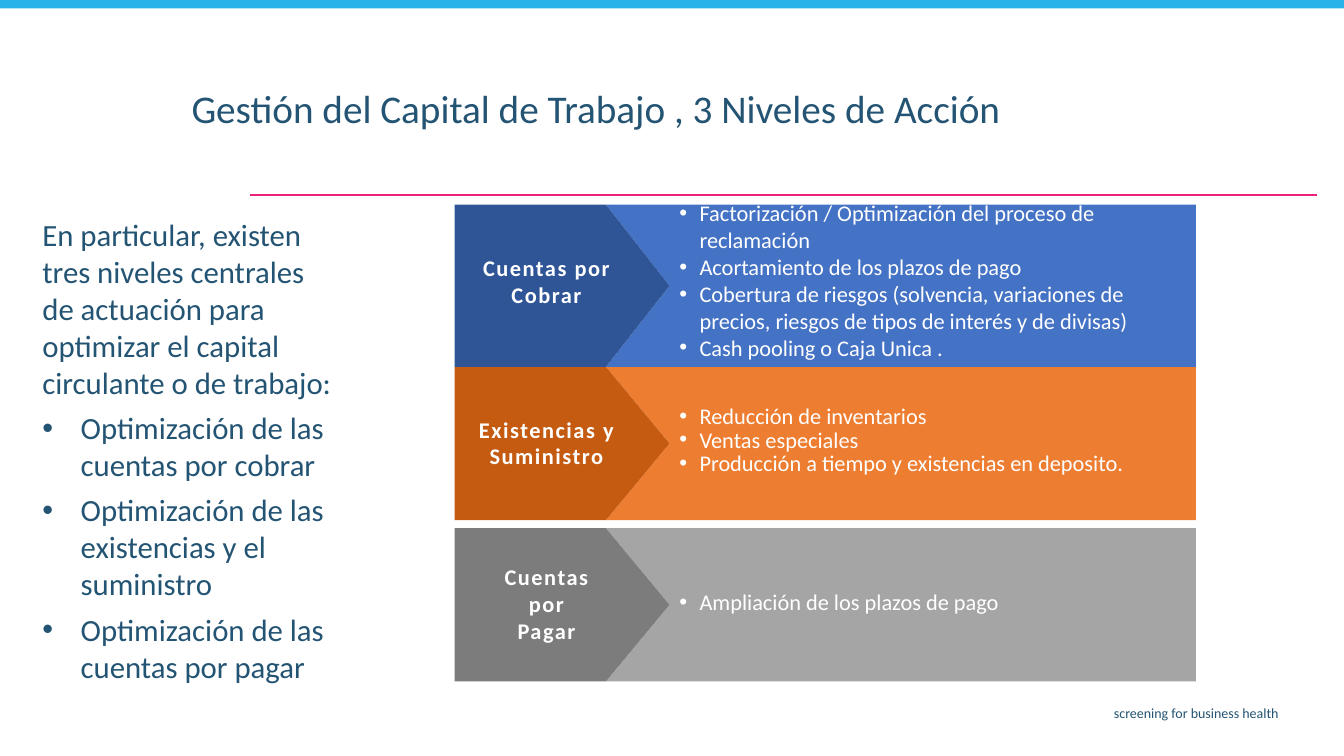
from lxml import etree
from pptx import Presentation, util as u
from pptx.dml.color import RGBColor
from pptx.enum import shapes, text
from pptx.oxml import ns

NAVY = RGBColor(0x24, 0x54, 0x73)
CYAN = RGBColor(0x29, 0xB3, 0xE8)
PINK = RGBColor(0xEC, 0x21, 0x79)
WHITE = RGBColor(0xFF, 0xFF, 0xFF)
BLUE = RGBColor(0x44, 0x72, 0xC4)
DEEP_BLUE = RGBColor(0x2F, 0x55, 0x97)
AMBER = RGBColor(0xED, 0x7D, 0x31)
DEEP_AMBER = RGBColor(0xC5, 0x5A, 0x11)
GRAY = RGBColor(0xA5, 0xA5, 0xA5)
DEEP_GRAY = RGBColor(0x7C, 0x7C, 0x7C)

LEFT, MID, TIP, RIGHT = 33.83, 45.09, 49.81, 88.97
TIGHT = u.Pt(16.6)

INTRO = ("En particular, existen tres niveles centrales de actuación para "
         "optimizar el capital circulante o de trabajo:")
GOALS = ["Optimización de las cuentas por cobrar",
         "Optimización de las existencias y el suministro",
         "Optimización de las cuentas por pagar"]

# top, height, text top, text height, line spacing, colours, label, points
BANDS = [
    (48.53, 20.27, 53.07, 10.93, TIGHT, AMBER, DEEP_AMBER,
     ["Existencias y", "Suministro"],
     ["Reducción de inventarios", "Ventas especiales",
      "Producción a tiempo y existencias en deposito."]),
    (69.87, 20.27, 77.6, 4.53, TIGHT, GRAY, DEEP_GRAY,
     ["Cuentas", "por", "Pagar"],
     ["Ampliación de los plazos de pago"]),
    (27.07, 21.46, 25.73, 22.93, 1.0, BLUE, DEEP_BLUE,
     ["Cuentas por", "Cobrar"],
     ["Factorización / Optimización del proceso de reclamación",
      "Acortamiento de los plazos de pago",
      "Cobertura de riesgos (solvencia, variaciones de precios, "
      "riesgos de tipos de interés y de divisas)",
      "Cash pooling o Caja Unica ."]),
]


class Deck:
    """Holds the style and the slide; lengths are percent of its size."""
    face = "Calibri"

    def __init__(self):
        self.prs = Presentation()
        self.prs.slide_width = u.Inches(13.33)
        self.prs.slide_height = u.Inches(7.5)
        self.slide = self.prs.slides.add_slide(self.prs.slide_layouts[5])
        self.items = self.slide.shapes

    def x(self, share):
        return round(self.prs.slide_width * share / 100)

    def y(self, share):
        return round(self.prs.slide_height * share / 100)

    def area(self, left, top, width, height):
        return self.x(left), self.y(top), self.x(width), self.y(height)

    def paint(self, shape, color):
        shape.shadow.inherit = False
        shape.fill.solid()
        shape.fill.fore_color.rgb = color
        shape.line.fill.background()

    def bar(self, area, color):
        kind = shapes.MSO_SHAPE.RECTANGLE
        self.paint(self.items.add_shape(kind, *self.area(*area)), color)

    def rule(self, start, end, color, width):
        line = self.items.add_connector(
            shapes.MSO_CONNECTOR.STRAIGHT, self.x(start[0]), self.y(start[1]),
            self.x(end[0]), self.y(end[1]))
        line.line.color.rgb = color
        line.line.width = u.Pt(width)
        etree.SubElement(line._element.spPr, ns.qn("a:effectLst"))

    def outline(self, points, color):
        first, *rest = [(self.x(a), self.y(b)) for a, b in points]
        pen = self.items.build_freeform(*first)
        pen.add_line_segments(rest, close=True)
        self.paint(pen.convert_to_shape(), color)

    def title(self, area, words, size, color):
        box = self.items.title
        box.left, box.top, box.width, box.height = self.area(*area)
        frame = box.text_frame
        frame.auto_size = text.MSO_AUTO_SIZE.NONE
        frame.vertical_anchor = text.MSO_ANCHOR.TOP
        self.say(frame.paragraphs[0], words, size, color, space=0.9)

    def box(self, area, inset=(0.1, 0.05), wrap=True,
            anchor=text.MSO_ANCHOR.TOP):
        frame = self.items.add_textbox(*self.area(*area)).text_frame
        frame.word_wrap = wrap
        frame.vertical_anchor = anchor
        frame.margin_left = frame.margin_right = u.Inches(inset[0])
        frame.margin_top = frame.margin_bottom = u.Inches(inset[1])
        return frame

    def fill(self, frame, lines, size, color, **style):
        """Add one paragraph per line, starting in the empty first one."""
        for line in lines:
            used = frame.paragraphs[0].runs
            para = frame.add_paragraph() if used else frame.paragraphs[0]
            self.say(para, line, size, color, **style)

    def say(self, para, words, size, color, align=text.PP_ALIGN.LEFT,
            space=1.0, before=0, indent=0, bold=False, track=0):
        """Style a paragraph; an indent in inches also gives it a bullet."""
        if indent:
            props = para._p.get_or_add_pPr()
            props.set("marL", str(u.Inches(indent)))
            props.set("indent", str(-u.Inches(indent)))
            etree.SubElement(props, ns.qn("a:buFont"), typeface="Arial")
            etree.SubElement(props, ns.qn("a:buChar"), char="•")
        para.alignment = align
        para.line_spacing = space
        para.space_before = u.Pt(before)
        run = para.add_run()
        run.text = words
        font = run.font
        font.name, font.size, font.bold = self.face, u.Pt(size), bold
        font.color.rgb = color
        if track:
            run._r.get_or_add_rPr().set("spc", str(round(track * 100)))

    def band(self, top, high, text_top, text_high, space, light, dark,
             label, points):
        """Draw an arrow with its label and the notched panel beside it."""
        mid, low = top + high / 2, top + high
        self.outline([(MID, top), (TIP, mid), (MID, low),
                      (RIGHT, low), (RIGHT, top)], light)
        self.outline([(MID, low), (LEFT, low), (LEFT, top),
                      (MID, top), (TIP, mid)], dark)
        center = text_top + text_high / 2
        tag = self.box((35.51, center - 3.6, 10.3, 7.2), (0, 0), False,
                       text.MSO_ANCHOR.MIDDLE)
        self.fill(tag, label, 16, WHITE, align=text.PP_ALIGN.CENTER,
                  bold=True, track=1.1)
        body = self.box((TIP, text_top, 38.48, text_high))
        self.fill(body, points, 16, WHITE, space=space, indent=0.2)


def main():
    deck = Deck()
    deck.rule((97.97, 25.8), (18.6, 25.8), PINK, 1.5)
    deck.bar((0, 0, 100, 1.1), CYAN)
    foot = deck.box((27.38, 92.53, 68.49, 3.87))
    deck.fill(foot, ["screening for business health"], 10, NAVY,
              align=text.PP_ALIGN.RIGHT)
    deck.title((13.5, 11.2, 72.62, 10.13),
               "Gestión del Capital de Trabajo , 3 Niveles de Acción",
               28, NAVY)
    intro = deck.box((2.48, 28, 23.03, 63.87), (0.09, 0.04))
    deck.fill(intro, [INTRO], 22, NAVY)
    deck.fill(intro, GOALS, 22, NAVY, before=6, indent=0.38)
    for band in BANDS:
        deck.band(*band)
    deck.prs.save("out.pptx")


if __name__ == "__main__":
    main()
